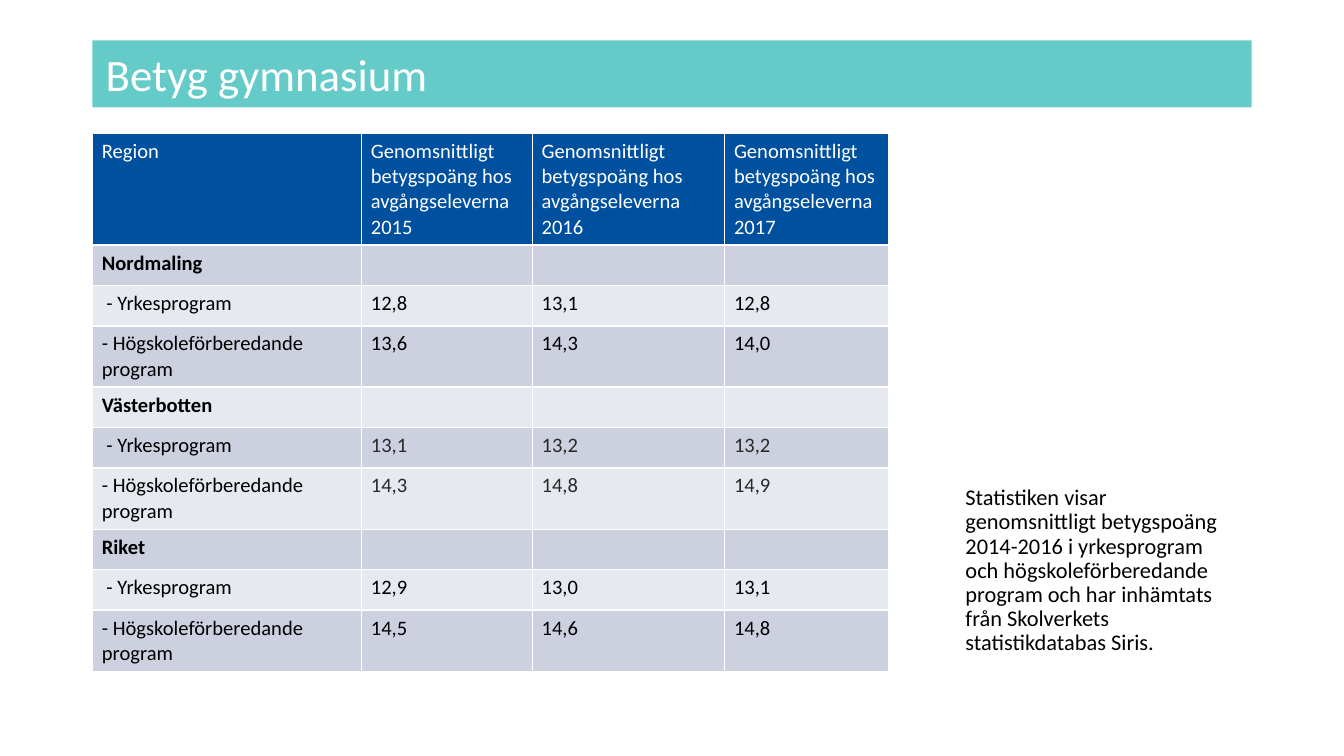
from dataclasses import dataclass

from lxml.etree import SubElement
from pptx import Presentation
from pptx.dml.color import RGBColor
from pptx.enum.shapes import MSO_SHAPE
from pptx.enum.text import MSO_ANCHOR, PP_ALIGN
from pptx.oxml.ns import qn
from pptx.util import Emu, Inches, Pt


@dataclass(frozen=True)
class Theme:
    """Colours, font and type sizes of the slide."""

    font: str = "Calibri"
    band: str = "64CBC9"
    header: str = "0050A0"
    stripes: tuple = ("CCD0DF", "E7E9F0")
    white: str = "FFFFFF"
    ink: str = "000000"
    soft_ink: str = "292929"
    title_size: int = 24
    table_size: int = 11
    note_size: int = 12


@dataclass(frozen=True)
class Box:
    """An area given in percent of the slide's width and height."""

    left: float
    top: float
    width: float
    height: float

    def on(self, deck):
        """Return left, top, width and height in EMU."""
        across, down = deck.slide_width / 100, deck.slide_height / 100
        return [Emu(round(share * unit)) for share, unit in zip(
            (self.left, self.top, self.width, self.height), (across, down) * 2)]


THEME = Theme()
SLIDE_WIDTH = Inches(10)
SLIDE_HEIGHT = Emu(SLIDE_WIDTH * 9 // 16)
TITLE_BOX = Box(6.88, 5.33, 86.25, 8.89)
TABLE_BOX = Box(6.88, 17.6, 59.25, 70.4)
NOTE_BOX = Box(70.85, 63.47, 22.28, 24.53)

YEARS = (2015, 2016, 2017)
COLUMN_SHARES = (2, 1.27, 1.43, 1.22)
ROWS_TO_FRAME = 0.97
HEADER_SHARE = 0.78
REGION_SHARES = (0.3, 0.3, 0.42)
PROGRAMS = (" - Yrkesprogram", "- Högskoleförberedande program")
GRADES = {
    "Nordmaling": (("12,8", "13,1", "12,8"), ("13,6", "14,3", "14,0")),
    "Västerbotten": (("13,1", "13,2", "13,2"), ("14,3", "14,8", "14,9")),
    "Riket": (("12,9", "13,0", "13,1"), ("14,5", "14,6", "14,8")),
}
SOFT_REGION = "Västerbotten"
NOTE = ("Statistiken visar genomsnittligt betygspoäng 2014-2016 i yrkesprogram "
        "och högskoleförberedande program och har inhämtats från Skolverkets "
        "statistikdatabas Siris.")
CELL_FORMAT = {
    "margin_left": Inches(0.07), "margin_right": Inches(0.07),
    "margin_top": Inches(0.04), "margin_bottom": Inches(0.04),
}


def apply(target, values):
    """Set each named attribute of the target."""
    for name, value in values.items():
        setattr(target, name, value)


def write(paragraph, text, size, color, bold=False):
    """Add one formatted run to a paragraph."""
    run = paragraph.add_run()
    run.text = text
    apply(run.font, {"name": THEME.font, "size": Pt(size), "bold": bold})
    run.font.color.rgb = RGBColor.from_string(color)


def add_title(deck, slide, box, text):
    """Draw the title band."""
    band = slide.shapes.add_shape(MSO_SHAPE.RECTANGLE, *box.on(deck))
    band.shadow.inherit = False
    band.fill.solid()
    band.fill.fore_color.rgb = RGBColor.from_string(THEME.band)
    band.line.fill.background()
    apply(band.text_frame, {"word_wrap": True, "vertical_anchor": MSO_ANCHOR.MIDDLE})
    heading = band.text_frame.paragraphs[0]
    heading.alignment = PP_ALIGN.LEFT
    write(heading, text, THEME.title_size, THEME.white)


def fill_cell(cell, text, fill, color, bold=False):
    """Format one table cell and write its text."""
    apply(cell, CELL_FORMAT)
    cell.fill.solid()
    cell.fill.fore_color.rgb = RGBColor.from_string(fill)
    paragraph = cell.text_frame.paragraphs[0]
    if text:
        write(paragraph, text, THEME.table_size, color, bold)
    else:
        SubElement(paragraph._p, qn("a:endParaRPr"), sz=str(THEME.table_size * 100))


def grade_rows():
    """Return each body row as its texts, figure colour and boldness."""
    rows = []
    for region, results in GRADES.items():
        color = THEME.soft_ink if region == SOFT_REGION else THEME.ink
        rows.append(((region,) + ("",) * len(YEARS), color, True))
        rows += [((program, *figures), color, False)
                 for program, figures in zip(PROGRAMS, results)]
    return rows


def add_grades(deck, slide, box):
    """Draw the table of grades by region, program and year."""
    left, top, width, height = box.on(deck)
    row_shares = (HEADER_SHARE,) + REGION_SHARES * len(GRADES)
    frame = slide.shapes.add_table(
        len(row_shares), len(COLUMN_SHARES), left, top, width, height)
    grades = frame.table
    for column, share in zip(grades.columns, COLUMN_SHARES):
        column.width = Emu(round(width * share / sum(COLUMN_SHARES)))
    for row, share in zip(grades.rows, row_shares):
        row.height = Emu(round(height * ROWS_TO_FRAME * share / sum(row_shares)))
    frame.height = height

    headings = ["Region"] + [
        f"Genomsnittligt betygspoäng hos avgångseleverna {year}" for year in YEARS]
    for column, heading in enumerate(headings):
        fill_cell(grades.cell(0, column), heading, THEME.header, THEME.white)
    for index, (texts, figure_color, bold) in enumerate(grade_rows()):
        stripe = THEME.stripes[index % 2]
        for column, text in enumerate(texts):
            color = figure_color if column else THEME.ink
            fill_cell(grades.cell(index + 1, column), text, stripe, color, bold)


def add_note(deck, slide, box, text):
    """Write the note about the statistics."""
    frame = slide.shapes.add_textbox(*box.on(deck)).text_frame
    frame.word_wrap = True
    note = frame.paragraphs[0]
    note.line_spacing = 0.9
    write(note, text, THEME.note_size, THEME.ink)


def main():
    """Build and save the slide."""
    deck = Presentation()
    apply(deck, {"slide_width": SLIDE_WIDTH, "slide_height": SLIDE_HEIGHT})
    slide = deck.slides.add_slide(deck.slide_layouts[6])
    add_title(deck, slide, TITLE_BOX, "Betyg gymnasium")
    add_grades(deck, slide, TABLE_BOX)
    add_note(deck, slide, NOTE_BOX, NOTE)
    deck.save("out.pptx")


if __name__ == "__main__":
    main()
